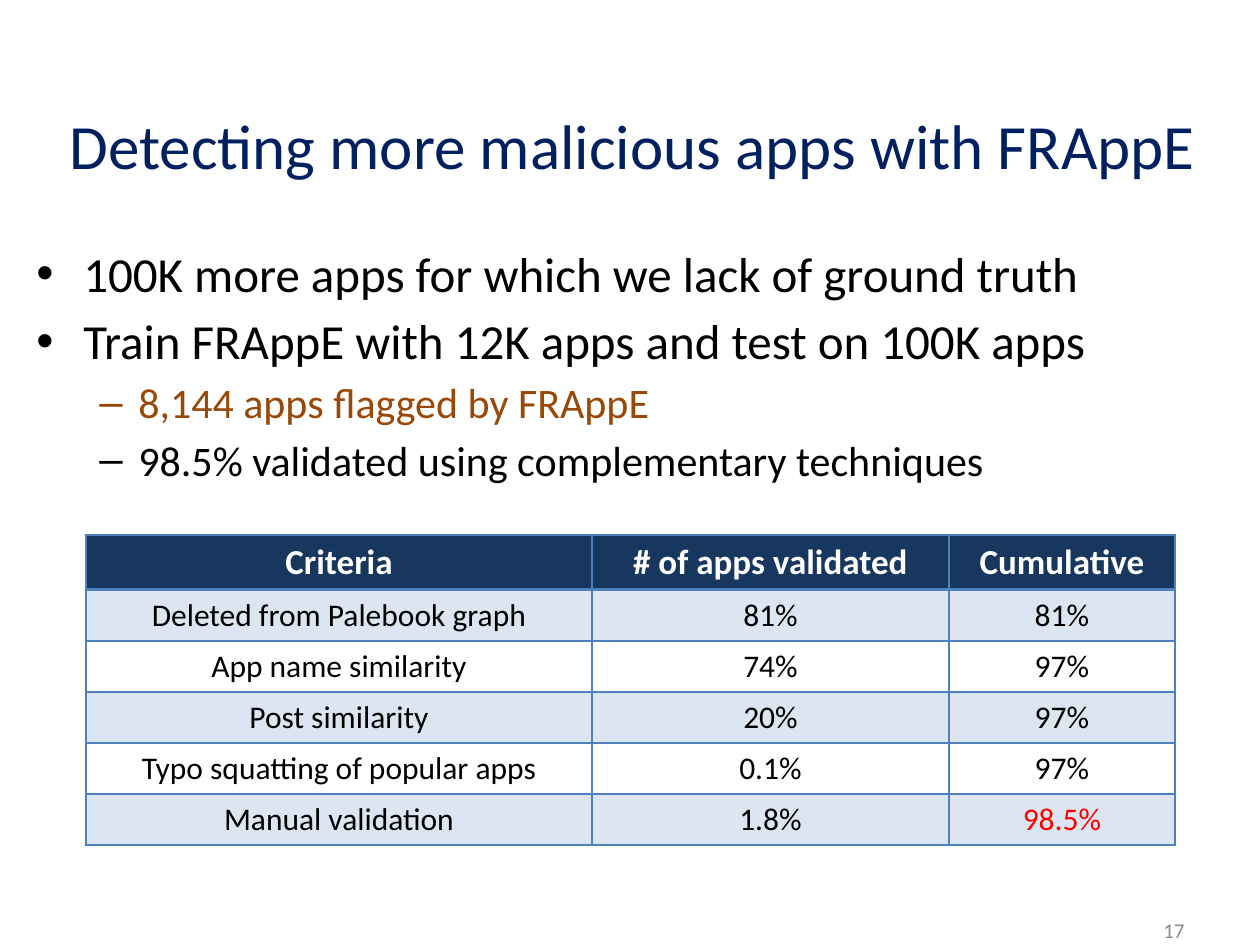
from dataclasses import dataclass

from lxml.etree import SubElement
from pptx import Presentation
from pptx.dml.color import RGBColor
from pptx.enum.text import MSO_ANCHOR as Anchor, PP_ALIGN as Align
from pptx.oxml.ns import qn
from pptx.util import Emu, Pt

EMU_PER_PX = 914400 / 126
FONT = "Calibri"
NAVY = RGBColor(0x00, 0x20, 0x60)
BLACK = RGBColor(0x00, 0x00, 0x00)
WHITE = RGBColor(0xFF, 0xFF, 0xFF)
GRAY = RGBColor(0x8C, 0x8C, 0x8C)
BROWN = RGBColor(0x98, 0x48, 0x07)
RED = RGBColor(0xFF, 0x00, 0x00)
HEADER_FILL = RGBColor(0x17, 0x37, 0x5E)
BAND_FILL = RGBColor(0xDC, 0xE6, 0xF2)
BORDER = RGBColor(0x4F, 0x81, 0xBD)


def px(n: int) -> Emu:
    return Emu(round(n * EMU_PER_PX))


@dataclass(frozen=True)
class Box:
    left: int
    top: int
    width: int
    height: int

    def emu(self) -> tuple:
        return px(self.left), px(self.top), px(self.width), px(self.height)


@dataclass(frozen=True)
class Level:
    bullet: str
    size: int
    margin: int
    hanging: int
    gap: int


@dataclass(frozen=True)
class Bullet:
    text: str
    level: Level
    color: RGBColor = BLACK


MAIN = Level("•", 28, 47, 47, 5)
SUB = Level("–", 24, 102, 39, 4)
BULLETS = [
    Bullet("100K more apps for which we lack of ground truth", MAIN),
    Bullet("Train FRAppE with 12K apps and test on 100K apps", MAIN),
    Bullet("8,144 apps flagged by FRAppE", SUB, BROWN),
    Bullet("98.5% validated using complementary techniques", SUB),
]

COLUMN_WIDTHS = [506, 357, 226]
HEADER_HEIGHT, ROW_HEIGHT = 55, 51
ROWS = [
    ("Criteria", "# of apps validated", "Cumulative"),
    ("Deleted from Palebook graph", "81%", "81%"),
    ("App name similarity", "74%", "97%"),
    ("Post similarity", "20%", "97%"),
    ("Typo squatting of popular apps", "0.1%", "97%"),
    ("Manual validation", "1.8%", "98.5%"),
]


def write(p, text: str, size: int, color: RGBColor, bold: bool = False) -> None:
    r = p.add_run()
    r.text = text
    for name, value in dict(name=FONT, size=Pt(size), bold=bold).items():
        setattr(r.font, name, value)
    r.font.color.rgb = color


def add_text_frame(s, box: Box, anchor: Anchor):
    tf = s.shapes.add_textbox(*box.emu()).text_frame
    tf.word_wrap = True
    tf.vertical_anchor = anchor
    return tf


def add_line_of_text(s, box: Box, text: str, size: int, color: RGBColor, align: Align) -> None:
    p = add_text_frame(s, box, Anchor.MIDDLE).paragraphs[0]
    p.alignment = align
    write(p, text, size, color)


def add_bullets(s, box: Box, bullets: list[Bullet]) -> None:
    tf = add_text_frame(s, box, Anchor.TOP)
    for i, bullet in enumerate(bullets):
        p = tf.add_paragraph() if i else tf.paragraphs[0]
        level = bullet.level
        pPr = p._p.get_or_add_pPr()
        pPr.set("marL", str(px(level.margin)))
        pPr.set("indent", str(-px(level.hanging)))
        SubElement(pPr, qn("a:buFont"), typeface="Arial")
        SubElement(pPr, qn("a:buChar"), char=level.bullet)
        if i:
            p.space_before = Pt(level.gap)
        write(p, bullet.text, level.size, bullet.color)


def add_border(cell, side: str, points: int) -> None:
    ln = SubElement(cell._tc.get_or_add_tcPr(), qn(f"a:ln{side}"), w=str(Pt(points)))
    SubElement(SubElement(ln, qn("a:solidFill")), qn("a:srgbClr"), val=str(BORDER))


def fill_cell(cell, text: str, row: int, color: RGBColor) -> None:
    header = row == 0
    # The rule under the header is double width
    widths = dict(L=1, R=1, T=2 if row == 1 else 1, B=2 if header else 1)
    for side, points in widths.items():
        add_border(cell, side, points)
    if header or row % 2:
        cell.fill.solid()
        cell.fill.fore_color.rgb = HEADER_FILL if header else BAND_FILL
    else:
        cell.fill.background()
    p = cell.text_frame.paragraphs[0]
    p.alignment = Align.CENTER
    write(p, text, 20 if header else 18, color, bold=header)


def add_validation_table(s, left: int, top: int) -> None:
    heights = [HEADER_HEIGHT] + [ROW_HEIGHT] * (len(ROWS) - 1)
    box = Box(left, top, sum(COLUMN_WIDTHS), sum(heights))
    table = s.shapes.add_table(len(ROWS), len(COLUMN_WIDTHS), *box.emu()).table
    table.horz_banding = False
    for column, width in zip(table.columns, COLUMN_WIDTHS):
        column.width = px(width)
    for i, (values, height) in enumerate(zip(ROWS, heights)):
        table.rows[i].height = px(height)
        for j, value in enumerate(values):
            color = WHITE if i == 0 else RED if value == "98.5%" else BLACK
            fill_cell(table.cell(i, j), value, i, color)


def main() -> None:
    prs = Presentation()
    prs.slide_width, prs.slide_height = px(1260), px(945)
    s = prs.slides.add_slide(prs.slide_layouts[6])
    add_line_of_text(s, Box(5, 69, 1255, 151), "Detecting more malicious apps with FRAppE",
                     36, NAVY, Align.CENTER)
    add_line_of_text(s, Box(903, 905, 294, 50), "17", 12, GRAY, Align.RIGHT)
    add_bullets(s, Box(24, 237, 1236, 309), BULLETS)
    add_validation_table(s, 86, 535)
    prs.save("out.pptx")


if __name__ == "__main__":
    main()
